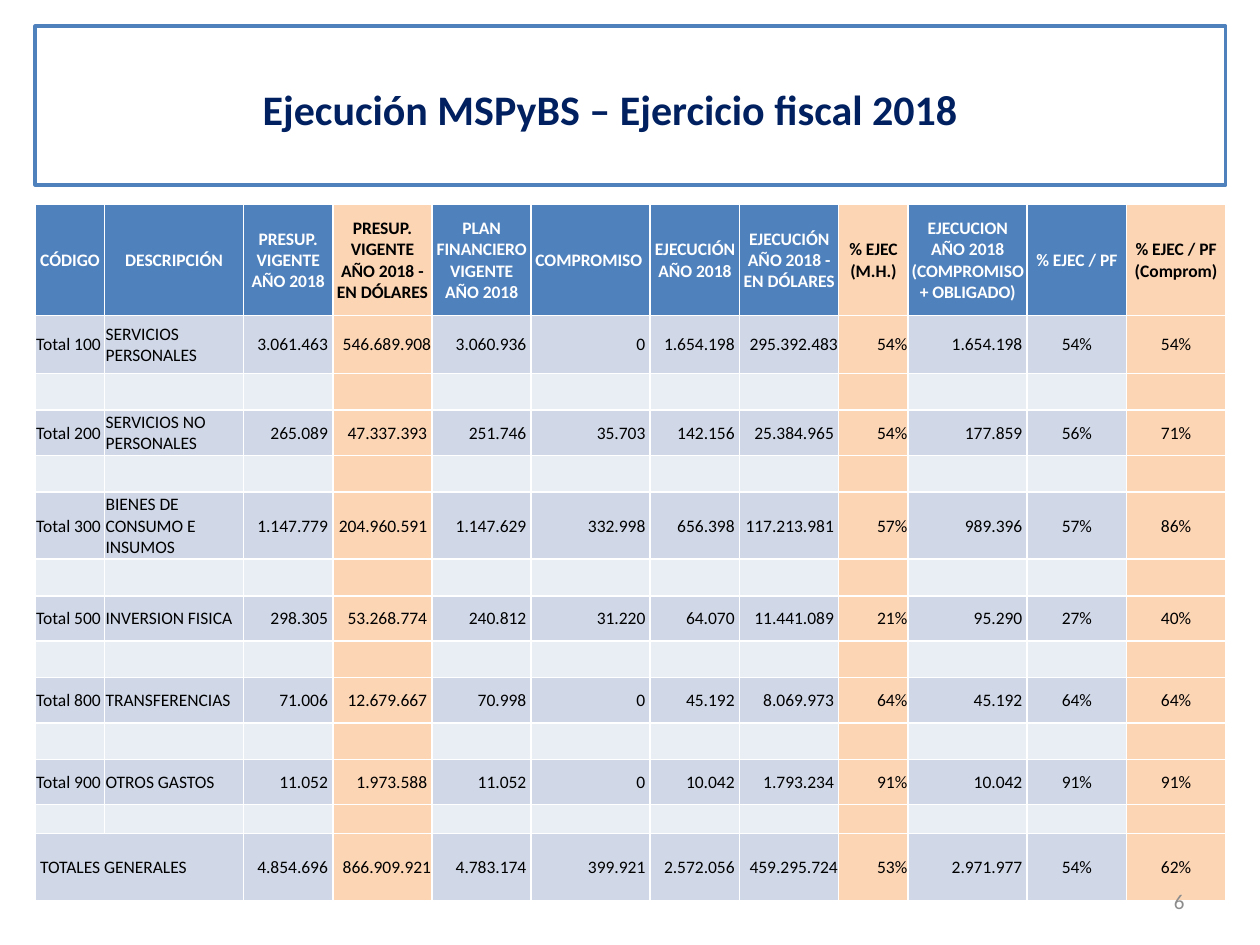
from pptx import Presentation
from pptx.dml.color import RGBColor
from pptx.enum import shapes, text
from pptx.util import Cm, Pt

COLORS = {"blue": "4F81BD", "navy": "002060", "peach": "FCD5B5", "band": "D0D8E8",
          "gap": "E9EDF4", "white": "FFFFFF", "black": "000000", "gray": "8C8C8C"}
FONT = "Calibri"
LEFT, CENTER, RIGHT = text.PP_ALIGN.LEFT, text.PP_ALIGN.CENTER, text.PP_ALIGN.RIGHT

TITLE = "Ejecución MSPyBS – Ejercicio fiscal 2018"
PAGE = "6"

# heading, width in cm, alignment of the values, highlighted
COLUMNS = [
    ("CÓDIGO", 1.4, LEFT, False),
    ("DESCRIPCIÓN", 2.8, LEFT, False),
    ("PRESUP. VIGENTE AÑO 2018", 1.8, RIGHT, False),
    ("PRESUP. VIGENTE AÑO 2018 - EN DÓLARES", 2, RIGHT, True),
    ("PLAN FINANCIERO VIGENTE AÑO 2018", 2, RIGHT, False),
    ("COMPROMISO ", 2.4, RIGHT, False),
    ("EJECUCIÓN AÑO 2018", 1.8, RIGHT, False),
    ("EJECUCIÓN AÑO 2018 - EN DÓLARES", 2, RIGHT, False),
    ("% EJEC (M.H.)", 1.4, RIGHT, True),
    ("EJECUCION AÑO 2018 (COMPROMISO + OBLIGADO)", 2.4, RIGHT, False),
    ("% EJEC / PF", 2, CENTER, False),
    ("% EJEC / PF (Comprom)", 2, CENTER, True),
]
HEADER_HEIGHT = 2.24

# height of the row and of the gap below it in cm, then the values
BUDGET = [
    (1.17, 0.74, ["Total 100", "SERVICIOS PERSONALES", "3.061.463 ", "546.689.908",
                  "3.060.936 ", "0 ", "1.654.198 ", "295.392.483", "54%",
                  "1.654.198 ", "54%", "54%"]),
    (0.91, 0.74, ["Total 200", "SERVICIOS NO PERSONALES", "265.089 ", "47.337.393 ",
                  "251.746 ", "35.703 ", "142.156 ", "25.384.965 ", "54%",
                  "177.859 ", "56%", "71%"]),
    (1.35, 0.74, ["Total 300", "BIENES DE CONSUMO E INSUMOS", "1.147.779 ", "204.960.591 ",
                  "1.147.629 ", "332.998 ", "656.398 ", "117.213.981 ", "57%",
                  "989.396 ", "57%", "86%"]),
    (0.91, 0.74, ["Total 500", "INVERSION FISICA", "298.305 ", "53.268.774 ",
                  "240.812 ", "31.220 ", "64.070 ", "11.441.089 ", "21%",
                  "95.290 ", "27%", "40%"]),
    (0.91, 0.74, ["Total 800", "TRANSFERENCIAS", "71.006 ", "12.679.667 ",
                  "70.998 ", "0 ", "45.192 ", "8.069.973 ", "64%",
                  "45.192 ", "64%", "64%"]),
    (0.91, 0.58, ["Total 900", "OTROS GASTOS", "11.052 ", "1.973.588 ",
                  "11.052 ", "0 ", "10.042 ", "1.793.234 ", "91%",
                  "10.042 ", "91%", "91%"]),
]
TOTALS = (1.35, [" TOTALES GENERALES", "", "4.854.696 ", "866.909.921",
                 "4.783.174 ", "399.921 ", "2.572.056 ", "459.295.724", "53%",
                 "2.971.977 ", "54%", "62%"])


def rgb(name):
    return RGBColor.from_string(COLORS[name])


def write(frame, words, size, color, align, bold=False):
    frame.word_wrap = True
    paragraph = frame.paragraphs[0]
    paragraph.alignment = align
    font = paragraph.font
    font.name, font.size, font.bold = FONT, Pt(size), bold
    font.color.rgb = rgb(color)
    if words:
        paragraph.add_run().text = words
    else:
        # an empty line takes its height from its end mark
        paragraph._p.get_or_add_endParaRPr().set("sz", str(size * 100))


def add_title(slide):
    frame = slide.shapes.add_shape(shapes.MSO_SHAPE.RECTANGLE,
                                   Cm(0.71), Cm(0.53), Cm(24), Cm(3.2))
    frame.shadow.inherit = False
    frame.fill.solid()
    frame.fill.fore_color.rgb = rgb("white")
    frame.line.color.rgb = rgb("blue")
    frame.line.width = Pt(2)
    slide.shapes._spTree.insert(2, frame._element)  # behind the title

    title = slide.shapes.title
    title.left, title.top, title.width, title.height = Cm(1.5), Cm(0.61), Cm(21.6), Cm(3.18)
    title.text_frame.vertical_anchor = text.MSO_ANCHOR.MIDDLE
    write(title.text_frame, TITLE, 24, "navy", CENTER, True)


def table_rows():
    """List each row as (kind, height, values)."""
    rows = [("header", HEADER_HEIGHT, [column[0] for column in COLUMNS])]
    for height, gap, values in BUDGET:
        rows += [("band", height, values), ("gap", gap, [""] * len(COLUMNS))]
    return rows + [("band", *TOTALS)]


def add_budget_table(slide):
    rows = table_rows()
    table = slide.shapes.add_table(
        len(rows), len(COLUMNS), Cm(0.71), Cm(4.12),
        Cm(sum(column[1] for column in COLUMNS)), Cm(sum(row[1] for row in rows))).table
    for c, column in enumerate(COLUMNS):
        table.columns[c].width = Cm(column[1])
    for r, (kind, height, values) in enumerate(rows):
        table.rows[r].height = Cm(height)
        header = kind == "header"
        for c, (_, _, align, highlighted) in enumerate(COLUMNS):
            cell = table.cell(r, c)
            cell.margin_left = cell.margin_top = cell.margin_right = Cm(0.02)
            cell.margin_bottom = 0
            cell.vertical_anchor = text.MSO_ANCHOR.MIDDLE
            cell.fill.solid()
            cell.fill.fore_color.rgb = rgb(
                "peach" if highlighted else "blue" if header else kind)
            write(cell.text_frame, values[c], 10,
                  "white" if header and not highlighted else "black",
                  CENTER if header else align, header)
    last = len(rows) - 1
    table.cell(last, 0).merge(table.cell(last, 1))


def add_page_number(slide):
    box = slide.shapes.add_textbox(Cm(18.2), Cm(17.66), Cm(5.93), Cm(1.01))
    box.text_frame.vertical_anchor = text.MSO_ANCHOR.MIDDLE
    write(box.text_frame, PAGE, 12, "gray", RIGHT)


def main():
    deck = Presentation()
    deck.slide_width, deck.slide_height = Cm(25.4), Cm(19.05)
    slide = deck.slides.add_slide(deck.slide_layouts[5])
    add_title(slide)
    add_budget_table(slide)
    add_page_number(slide)
    deck.save("out.pptx")


if __name__ == "__main__":
    main()
